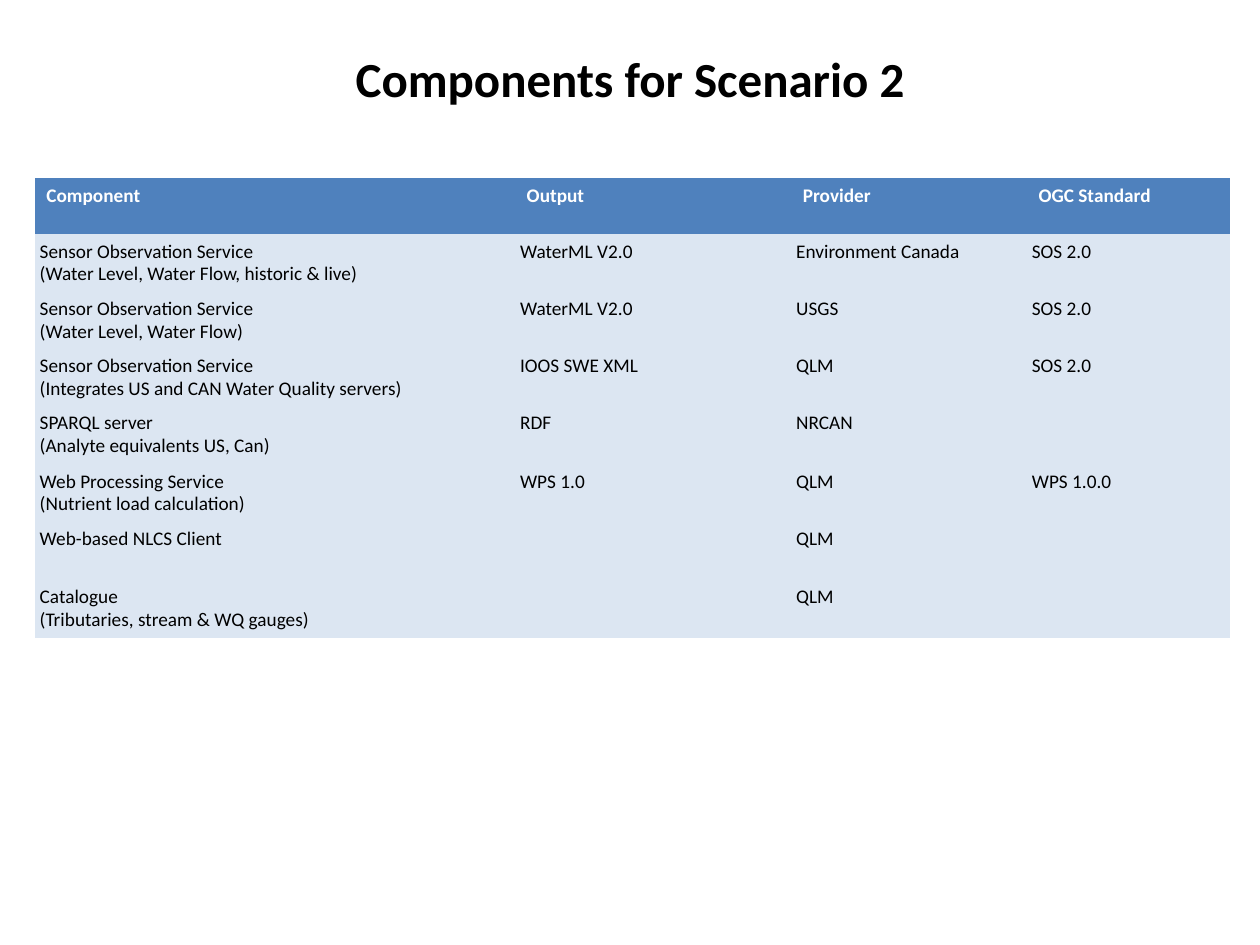
from pptx import Presentation
from pptx import util as u
from pptx.dml.color import RGBColor
from pptx.enum import text
from pptx.oxml.ns import qn

BLACK = RGBColor(0x00, 0x00, 0x00)
WHITE = RGBColor(0xFF, 0xFF, 0xFF)
BLUE = RGBColor(0x4F, 0x81, 0xBD)
PALE = RGBColor(0xDC, 0xE6, 0xF2)
FONT = "Calibri"
PLAIN = "{2D5ABB26-0587-4C30-8999-92F81FD0307C}"

COLS = [274.5, 157.8, 134.7, 115.9]
HEIGHTS = [32, 32.6, 32.6, 32.6, 33.6, 32.6, 33.6, 33.6]
ROWS = [
    ("Component", "Output", "Provider", "OGC Standard"),
    ("Sensor Observation Service\n(Water Level, Water Flow, historic & live)",
     "WaterML V2.0", "Environment Canada", "SOS 2.0"),
    ("Sensor Observation Service\n(Water Level, Water Flow)",
     "WaterML V2.0", "USGS", "SOS 2.0"),
    ("Sensor Observation Service\n(Integrates US and CAN Water Quality servers)",
     "IOOS SWE XML", "QLM", "SOS 2.0"),
    ("SPARQL server\n(Analyte equivalents US, Can)", "RDF", "NRCAN", ""),
    ("Web Processing Service\n(Nutrient load calculation)",
     "WPS 1.0", "QLM", "WPS 1.0.0"),
    ("Web-based NLCS Client", "", "QLM", ""),
    ("Catalogue\n(Tributaries, stream & WQ gauges)", "", "QLM", ""),
]


def style(para, size, color, bold):
    """Set the font of a whole paragraph."""
    font = para.font
    font.name = FONT
    font.size = u.Pt(size)
    font.bold = bold
    font.color.rgb = color


def add_title(slide, words):
    """Place and format the slide title."""
    title = slide.shapes.title
    title.left, title.top = u.Pt(36), u.Pt(-0.7)
    title.width, title.height = u.Pt(648), u.Pt(90)
    frame = title.text_frame
    frame.text = words
    frame.vertical_anchor = text.MSO_ANCHOR.MIDDLE
    para = frame.paragraphs[0]
    para.alignment = text.PP_ALIGN.CENTER
    style(para, 28, BLACK, True)


def fill_cell(cell, words, head):
    """Write one cell as a heading or as body text."""
    cell.fill.solid()
    cell.fill.fore_color.rgb = BLUE if head else PALE
    cell.margin_left = cell.margin_right = u.Pt(6.5 if head else 2.7)
    cell.margin_top = u.Pt(3.6)
    cell.margin_bottom = u.Pt(3.6 if head else 2.9)
    cell.text_frame.text = words
    for para in cell.text_frame.paragraphs:
        para.line_spacing = 0.96
        style(para, 11, WHITE if head else BLACK, head)


def add_grid(slide):
    """Build the table of components."""
    frame = slide.shapes.add_table(
        len(ROWS), len(COLS), u.Pt(20), u.Pt(101.5),
        u.Pt(sum(COLS)), u.Pt(sum(HEIGHTS)))
    table = frame.table
    table.horz_banding = False
    table._tbl.tblPr.find(qn("a:tableStyleId")).text = PLAIN
    for col, width in zip(table.columns, COLS):
        col.width = u.Pt(width)
    for i, (row, height) in enumerate(zip(table.rows, HEIGHTS)):
        row.height = u.Pt(height)
        for cell, words in zip(row.cells, ROWS[i]):
            fill_cell(cell, words, i == 0)


def main():
    """Build and save the slide."""
    deck = Presentation()
    deck.slide_width, deck.slide_height = u.Pt(720), u.Pt(540)
    slide = deck.slides.add_slide(deck.slide_layouts[5])
    add_title(slide, "Components for Scenario 2")
    add_grid(slide)
    deck.save("out.pptx")


if __name__ == "__main__":
    main()
